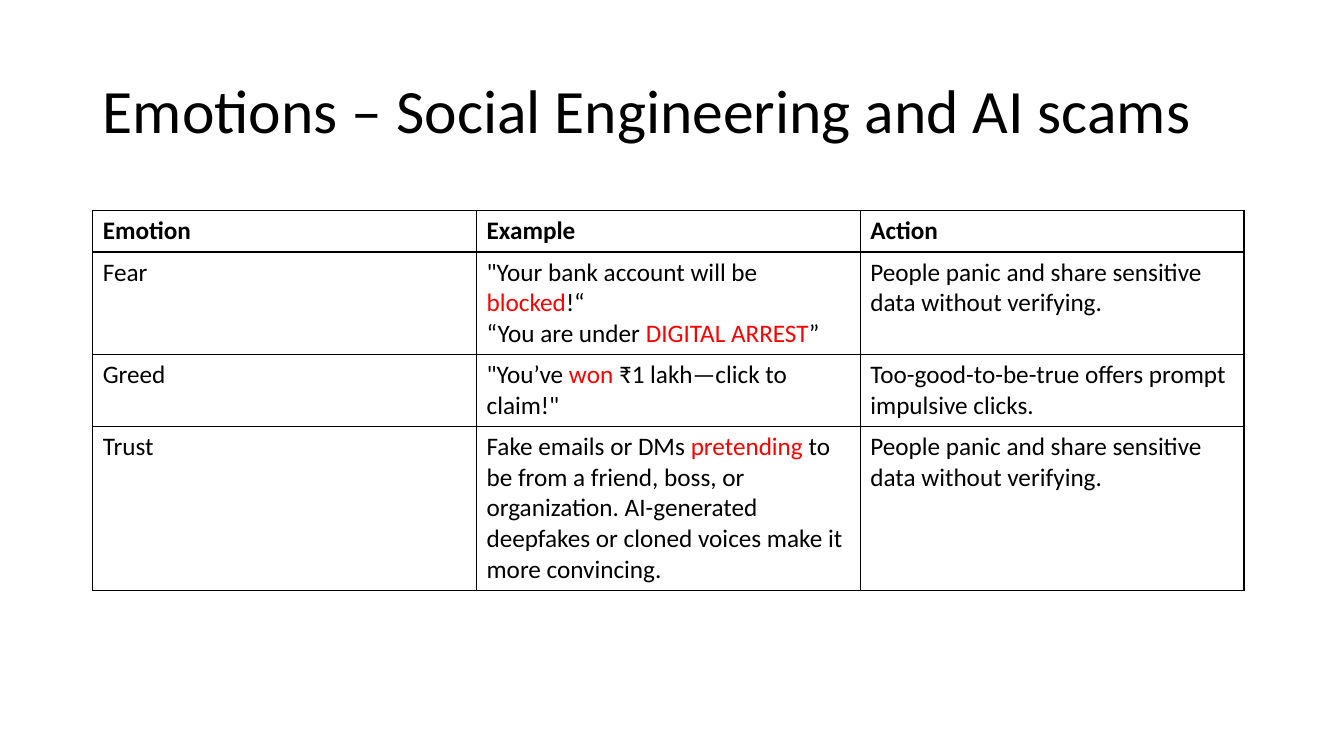
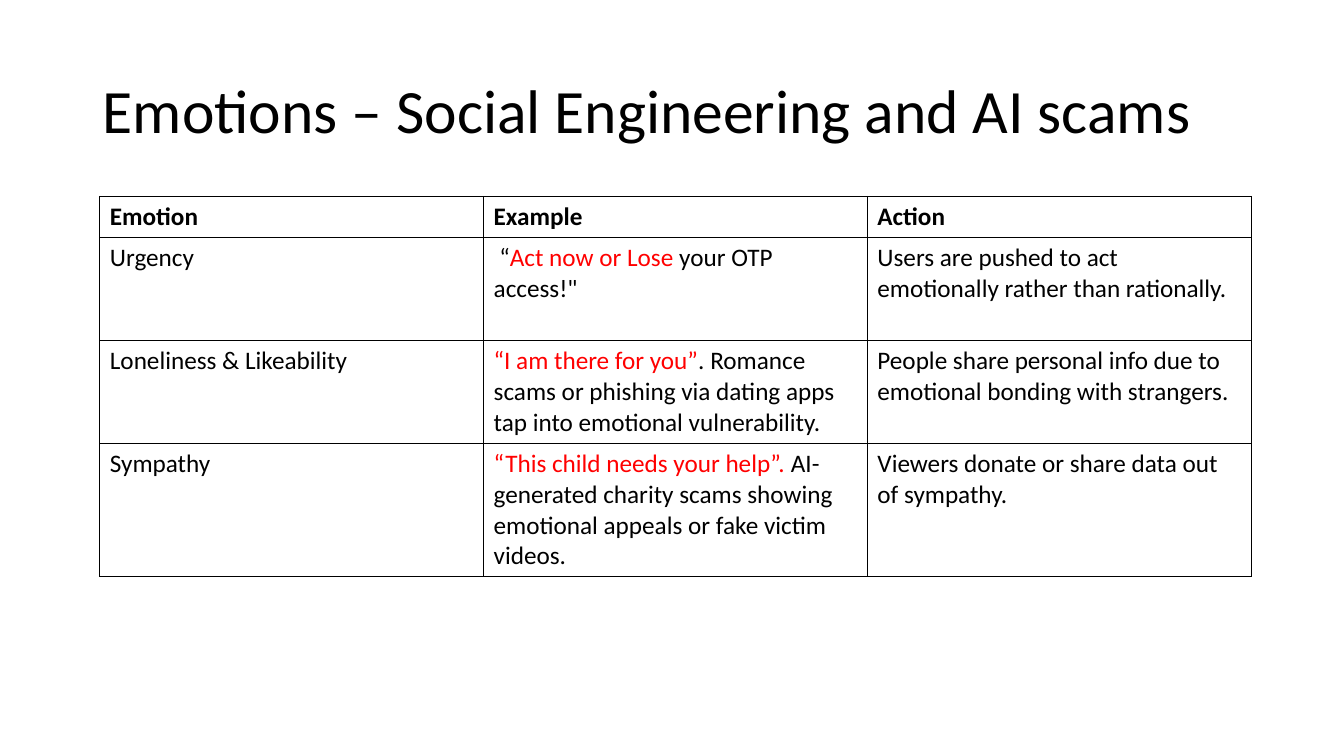
from dataclasses import dataclass

from lxml import etree
from pptx import Presentation
from pptx.dml.color import RGBColor
from pptx.enum.text import MSO_ANCHOR, MSO_AUTO_SIZE, PP_ALIGN
from pptx.oxml.ns import qn
from pptx.util import Inches, Pt

LEFT = PP_ALIGN.LEFT
MIDDLE = MSO_ANCHOR.MIDDLE
NO_FIT = MSO_AUTO_SIZE.NONE
TITLE_ONLY = 5


@dataclass(frozen=True)
class Theme:
    font: str = "Calibri"
    ink: str = "000000"
    accent: str = "FF0000"
    paper: str = "FFFFFF"
    title_size: int = 44
    cell_size: int = 18
    border: int = 1


THEME = Theme()
SLIDE_W, SLIDE_H = 13.33, 7.5
TITLE_BOX = (0.92, 0.4, 11.5, 1.45)
TABLE_W = 11.42
TITLE = "Emotions – Social Engineering and AI scams"
HEADER = ("Emotion", "Example", "Action")
PANIC = "People panic and share sensitive data without verifying."

# Asterisks enclose highlighted words; a line break starts a new paragraph.
# Each slide: table left and top, row heights, body rows
SLIDES = [
    ((0.92, 2.09), (0.41, 1.02, 0.71, 1.63), [
        ("Fear",
         "\"Your bank account will be *blocked*!“\n“You are under *DIGITAL ARREST*”",
         PANIC),
        ("Greed",
         "\"You’ve *won* ₹1 lakh—click to claim!\"",
         "Too-good-to-be-true offers prompt impulsive clicks."),
        ("Trust",
         "Fake emails or DMs *pretending* to be from a friend, boss, or organization. "
         "AI-generated deepfakes or cloned voices make it more convincing.",
         PANIC),
    ]),
    ((0.99, 1.95), (0.41, 1.02, 1.02, 1.32), [
        ("Urgency",
         " “*Act now or Lose *your OTP access!\"",
         "Users are pushed to act emotionally rather than rationally."),
        ("Loneliness & Likeability",
         "*“I am there for you”*. Romance scams or phishing via dating apps "
         "tap into emotional vulnerability.",
         "People share personal info due to emotional bonding with strangers."),
        ("Sympathy",
         "*“This child needs your help”.* AI-generated charity scams showing "
         "emotional appeals or fake victim videos.",
         "Viewers donate or share data out of sympathy."),
    ]),
]


def write(tf, text, size, bold=False, spacing=1.0):
    """Fill a text frame, colouring the words between asterisks."""
    for i, line in enumerate(text.split("\n")):
        p = tf.add_paragraph() if i else tf.paragraphs[0]
        p.alignment = LEFT
        p.line_spacing = spacing
        for j, part in enumerate(line.split("*")):
            if not part:
                continue
            r = p.add_run()
            r.text = part
            r.font.name = THEME.font
            r.font.size = Pt(size)
            r.font.bold = bold
            r.font.color.rgb = RGBColor.from_string(THEME.accent if j % 2 else THEME.ink)


def style_cell(cell):
    """Give a cell a plain fill and a thin line on all four sides."""
    tcPr = cell._tc.get_or_add_tcPr()
    for side in ("a:lnL", "a:lnR", "a:lnT", "a:lnB"):
        ln = etree.SubElement(tcPr, qn(side), w=str(Pt(THEME.border)))
        fill = etree.SubElement(ln, qn("a:solidFill"))
        etree.SubElement(fill, qn("a:srgbClr"), val=THEME.ink)
    cell.fill.solid()
    cell.fill.fore_color.rgb = RGBColor.from_string(THEME.paper)


def add_title(s, text, box):
    sp = s.shapes.title
    sp.left, sp.top, sp.width, sp.height = map(Inches, box)
    tf = sp.text_frame
    tf.word_wrap = True
    tf.auto_size = NO_FIT
    tf.vertical_anchor = MIDDLE
    write(tf, text, THEME.title_size, spacing=0.9)


def add_emotion_table(s, rows, heights, box):
    table = s.shapes.add_table(len(rows), len(HEADER), *map(Inches, box)).table
    table.horz_banding = False
    for column in table.columns:
        column.width = Inches(box[2] / len(HEADER))
    for i, (row, height) in enumerate(zip(rows, heights)):
        table.rows[i].height = Inches(height)
        for j, text in enumerate(row):
            cell = table.cell(i, j)
            style_cell(cell)
            write(cell.text_frame, text, THEME.cell_size, bold=i == 0)


def emotion_slide(prs, corner, heights, rows):
    s = prs.slides.add_slide(prs.slide_layouts[TITLE_ONLY])
    add_title(s, TITLE, TITLE_BOX)
    add_emotion_table(s, [HEADER, *rows], heights, (*corner, TABLE_W, sum(heights)))


def main():
    prs = Presentation()
    prs.slide_width, prs.slide_height = Inches(SLIDE_W), Inches(SLIDE_H)
    for corner, heights, rows in SLIDES:
        emotion_slide(prs, corner, heights, rows)
    prs.save("out.pptx")


if __name__ == "__main__":
    main()
